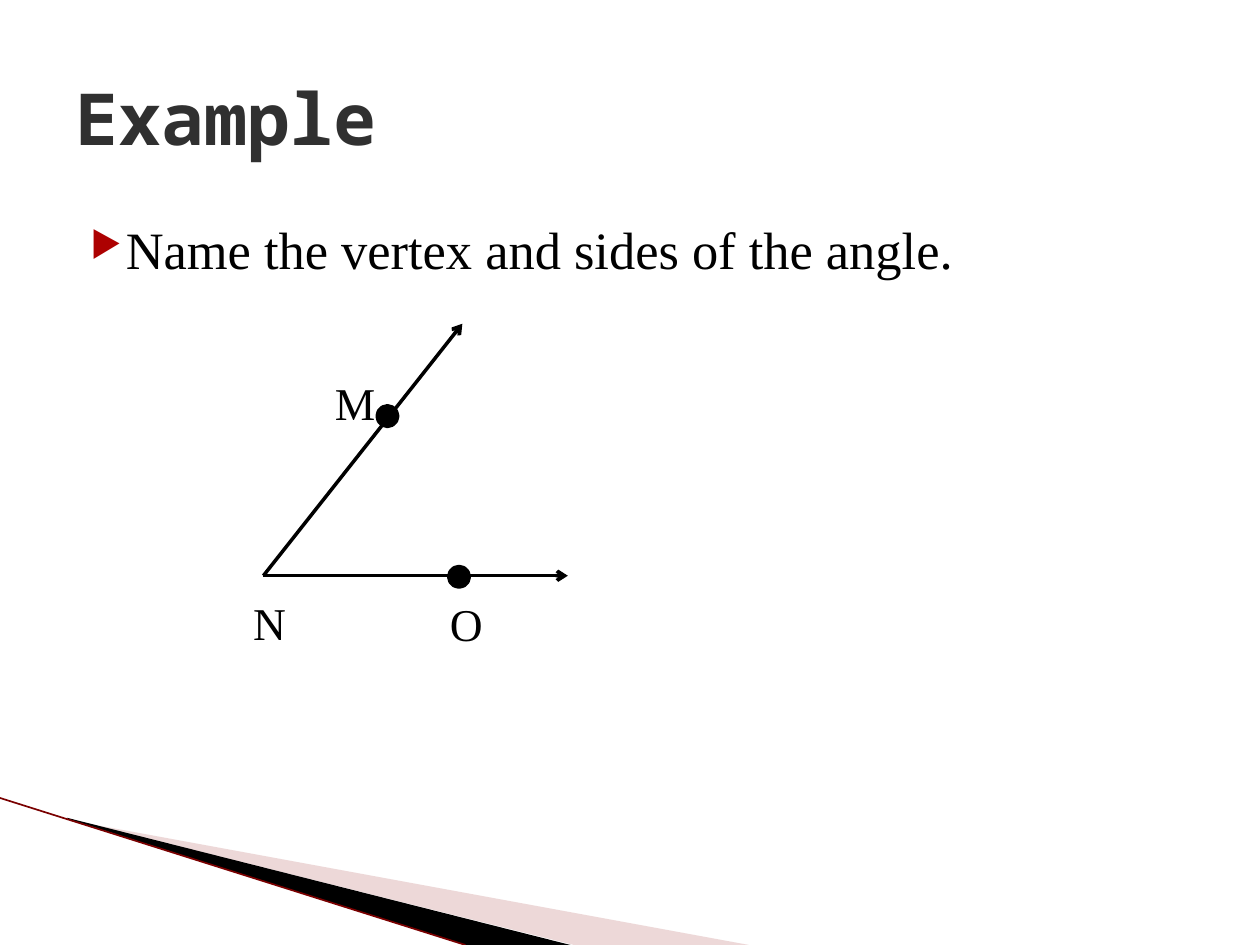
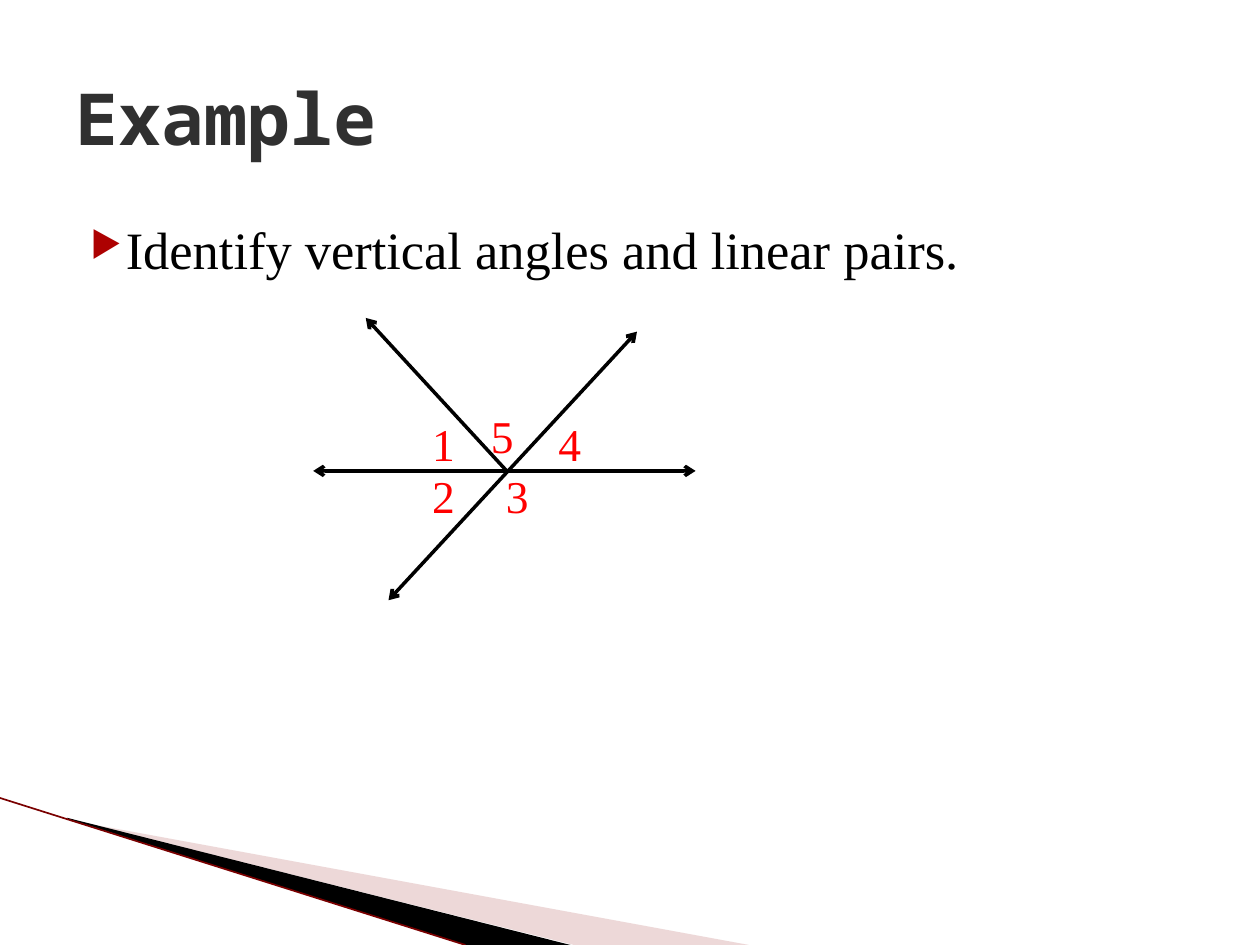
from lxml.etree import SubElement
from pptx import Presentation
from pptx.dml.color import RGBColor
from pptx.enum.shapes import MSO_CONNECTOR, MSO_SHAPE
from pptx.enum.text import MSO_ANCHOR, MSO_AUTO_SIZE, PP_ALIGN
from pptx.oxml.ns import qn
from pptx.util import Pt

BLACK, RED, BULLET_RED = "000000", "FF0000", "AD0101"
TITLE_GREY, PALE_RED, EDGE_RED = "303030", "D29E9E", "7A0000"
BODY_FONT, TITLE_FONT = "Times New Roman", "Noto Sans Mono"


def style_font(paragraph, name, size, color, bold=False):
    font = paragraph.runs[0].font
    font.name, font.size, font.bold = name, Pt(size), bold
    font.color.rgb = RGBColor.from_string(color)


def add_line(slide, start, end, color, width, arrows=()):
    line = slide.shapes.add_connector(
        MSO_CONNECTOR.STRAIGHT, *[Pt(value) for value in (*start, *end)])
    line.line.color.rgb = RGBColor.from_string(color)
    line.line.width = Pt(width)
    for arrow in arrows:
        SubElement(line.line._ln, qn(f"a:{arrow}"), type="arrow")
    SubElement(line._element.spPr, qn("a:effectLst"))


# Corner wedges: outline, fill, opacity in percent
wedges = [
    ([(39.6, 468.7), (428, 540), (328, 540), (39.6, 468)], PALE_RED, 40),
    ([(38.2, 467.3), (326, 540), (266, 540), (38.9, 468)], BLACK, 100),
]

# Angle diagrams, in points
one_way, two_way = ["tailEnd"], ["headEnd", "tailEnd"]
vertex = (150.5, 329)
diagrams = [
    {"task": "Name the vertex and sides of the angle.",
     "lines": [(vertex, (264.2, 185), one_way),
               (vertex, (324.5, 329), one_way)],
     "dots": [(221.4, 237.8), (262.3, 329.6)],
     "labels": [("M", 184.3, 211), ("N", 137.5, 336.5), ("O", 250, 337)],
     "label_color": BLACK, "label_width": 26},
    {"task": "Identify vertical angles and linear pairs.",
     "lines": [((179, 269.1), (397.5, 269.1), two_way),
               ((289, 268.5), (209, 181.7), one_way),
               ((222, 343), (364, 189.5), two_way)],
     "dots": [],
     "labels": [("1", 239.8, 234), ("2", 239.8, 264), ("3", 282, 264),
                ("4", 312, 234), ("5", 273.5, 229.7)],
     "label_color": RED, "label_width": 30},
]
DOT_SIZE = 9.4

presentation = Presentation()
presentation.slide_width, presentation.slide_height = Pt(720), Pt(540)

for diagram in diagrams:
    slide = presentation.slides.add_slide(presentation.slide_layouts[5])

    # Corner decoration
    for points, color, opacity in wedges:
        corners = [(Pt(x), Pt(y)) for x, y in points]
        builder = slide.shapes.build_freeform(*corners[0])
        builder.add_line_segments(corners[1:])
        wedge = builder.convert_to_shape()
        wedge.shadow.inherit = False
        wedge.line.fill.background()
        wedge.fill.solid()
        wedge.fill.fore_color.rgb = RGBColor.from_string(color)
        if opacity < 100:
            fill_color = wedge._element.spPr.find(".//" + qn("a:srgbClr"))
            SubElement(fill_color, qn("a:alpha"), val=str(opacity * 1000))
    add_line(slide, (0, 456), (266, 540), EDGE_RED, 0.95)

    # Title
    title = slide.shapes.title
    title.left, title.top, title.width, title.height = Pt(36), Pt(21.6), Pt(648), Pt(90)
    frame = title.text_frame
    frame.text = "Example"
    frame.auto_size = MSO_AUTO_SIZE.NONE
    frame.vertical_anchor = MSO_ANCHOR.MIDDLE
    frame.paragraphs[0].alignment = PP_ALIGN.LEFT
    style_font(frame.paragraphs[0], TITLE_FONT, 41, TITLE_GREY, bold=True)

    # Bulleted task
    task = slide.shapes.add_textbox(Pt(36), Pt(120.6), Pt(648), Pt(352.4))
    task.text_frame.word_wrap = True
    paragraph = task.text_frame.paragraphs[0]
    paragraph.text = diagram["task"]
    properties = paragraph._p.get_or_add_pPr()
    properties.set("marL", str(Pt(28.8)))
    properties.set("indent", str(-Pt(20.16)))
    bullet_color = SubElement(properties, qn("a:buClr"))
    SubElement(bullet_color, qn("a:srgbClr"), val=BULLET_RED)
    SubElement(properties, qn("a:buSzPct"), val="68000")
    SubElement(properties, qn("a:buChar"), char="▶")
    style_font(paragraph, BODY_FONT, 30, BLACK)

    # Rays and lines
    for start, end, arrows in diagram["lines"]:
        add_line(slide, start, end, BLACK, 2, arrows)

    # Points on the rays
    for x, y in diagram["dots"]:
        dot = slide.shapes.add_shape(
            MSO_SHAPE.OVAL, Pt(x - DOT_SIZE / 2), Pt(y - DOT_SIZE / 2),
            Pt(DOT_SIZE), Pt(DOT_SIZE))
        dot.shadow.inherit = False
        dot.fill.solid()
        dot.fill.fore_color.rgb = RGBColor.from_string(BLACK)
        dot.line.color.rgb = RGBColor.from_string(BLACK)
        dot.line.width = Pt(4.33)

    # Point and angle labels
    for text, left, top in diagram["labels"]:
        label = slide.shapes.add_textbox(
            Pt(left), Pt(top), Pt(diagram["label_width"]), Pt(39))
        label.text_frame.word_wrap = True
        label.text_frame.text = text
        style_font(label.text_frame.paragraphs[0], BODY_FONT, 26, diagram["label_color"])

presentation.save("out.pptx")
